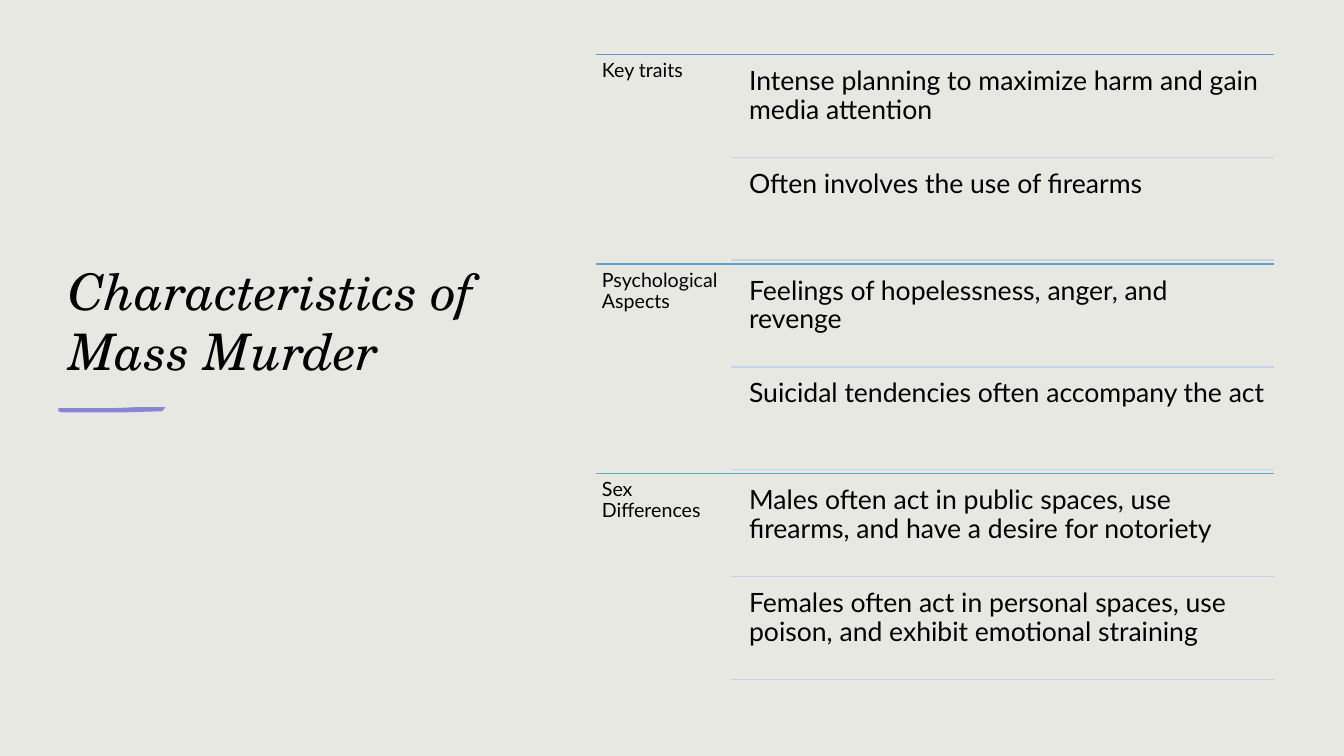
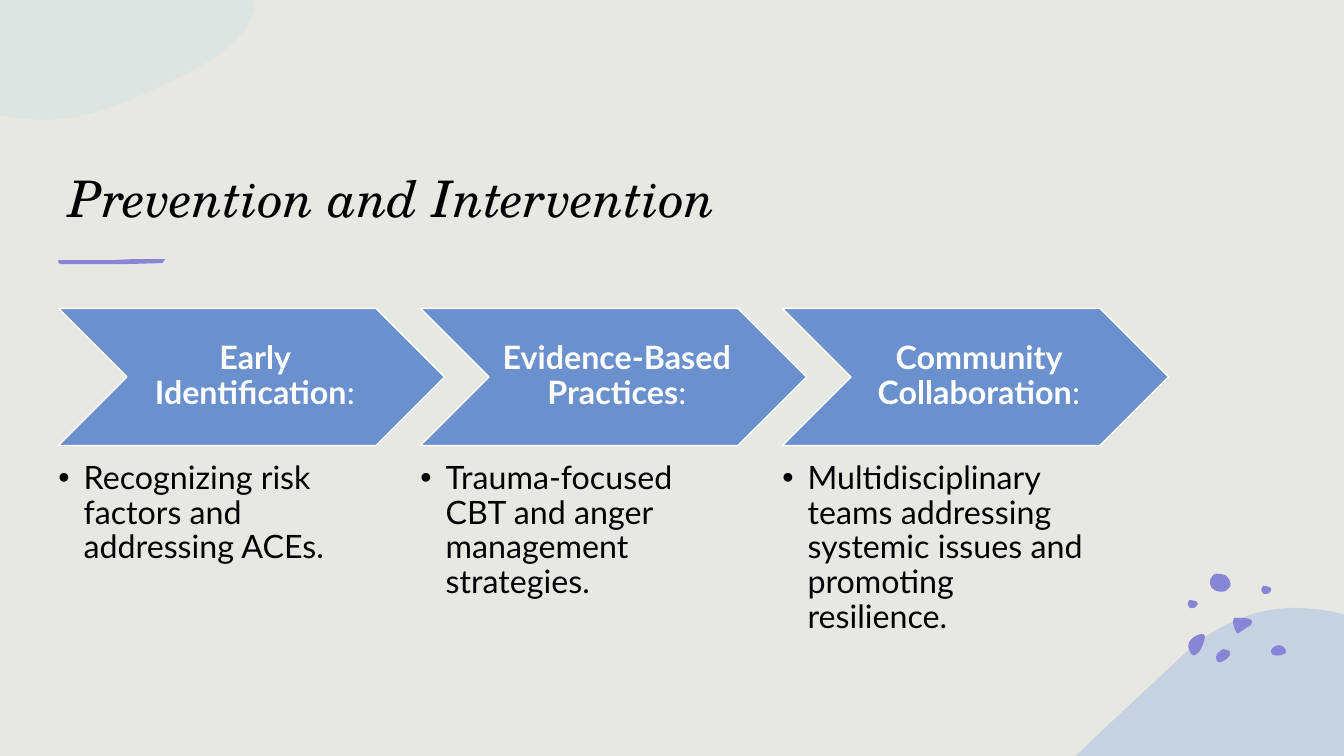
from lxml import etree
from pptx import Presentation
from pptx import util as u
from pptx.dml.color import RGBColor
from pptx.enum import shapes, text
from pptx.oxml.ns import qn

PX = 9144  # EMU in one px, 100 px to the inch
WIDTH, HEIGHT = 1333, 750

PAPER = RGBColor(0xE8, 0xE8, 0xE2)
BLACK = RGBColor(0x00, 0x00, 0x00)
WHITE = RGBColor(0xFF, 0xFF, 0xFF)
VIOLET = RGBColor(0x88, 0x85, 0xD7)
BLUE = RGBColor(0x6A, 0x90, 0xCE)
SKY = RGBColor(0x62, 0x9E, 0xC9)
TEAL = RGBColor(0x5A, 0xAE, 0xC3)
PALE_BLUE = RGBColor(0xC7, 0xD1, 0xE8)
HILL_BLUE = RGBColor(0xA6, 0xBC, 0xE2)
CLOUD_TEAL = RGBColor(0xBD, 0xDF, 0xE7)

# Outlines: a start point, then lines (x, y) and cubic curves (six numbers).
BRUSH = [(58, 1), (111, 1), (133, 0), (164, 0), (161, 4), (124, 5),
         (61, 5), (58, 4)]
CLOUD = [(0, 0), (253, 0), (253, 6), (245, 44, 200, 67, 158, 86),
         (123, 103, 86, 119, 41, 119), (31, 119, 22, 118, 13, 116), (0, 114)]
HILL = [(1288, 603), (1301, 604, 1314, 605, 1327, 608), (1333, 610),
        (1333, 750), (1067, 750), (1068, 749),
        (1102, 716, 1137, 684, 1169, 654), (1191, 632, 1214, 619, 1237, 611),
        (1254, 605, 1271, 603, 1288, 603)]
PEBBLES = [
    [(1213, 644), (1215, 644, 1216, 644, 1218, 645),
     (1220, 646, 1221, 648, 1220, 650), (1218, 653, 1212, 658, 1208, 657),
     (1207, 656, 1206, 654, 1206, 652), (1206, 650, 1208, 647, 1210, 646)],
    [(1191, 629), (1193, 629, 1195, 629, 1195, 631),
     (1195, 633), (1194, 638, 1192, 643, 1189, 647),
     (1187, 649, 1184, 652, 1182, 649), (1179, 646, 1178, 641, 1179, 638),
     (1180, 635, 1182, 634, 1184, 632), (1185, 632, 1188, 629, 1191, 629)],
    [(1269, 640), (1271, 640, 1274, 642, 1275, 644),
     (1276, 646, 1276, 648, 1273, 649), (1270, 651, 1262, 651, 1261, 648),
     (1260, 646, 1261, 644, 1262, 643), (1264, 641, 1266, 640, 1269, 640)],
    [(1201, 581), (1200, 581, 1199, 575, 1202, 572),
     (1204, 570, 1204, 569, 1207, 569), (1210, 569, 1214, 570, 1216, 571),
     (1218, 573, 1222, 578, 1220, 582), (1217, 585, 1216, 587, 1212, 587),
     (1209, 587, 1204, 586, 1203, 584), (1201, 583, 1201, 582, 1201, 581)],
    [(1228, 613), (1234, 613, 1245, 613, 1241, 619),
     (1241, 620, 1240, 621, 1239, 621), (1230, 627),
     (1229, 628, 1228, 629, 1227, 628), (1226, 627),
     (1224, 623, 1223, 620, 1223, 616), (1223, 615, 1223, 614, 1224, 613)],
]
SMALL_PEBBLE = [(0, 5), (0, 5, 0, 1, 2, 0), (4, 0, 5, 0, 7, 1),
                (8, 1, 10, 2, 10, 4), (10, 5, 9, 6, 8, 7),
                (8, 7, 8, 8, 6, 8), (5, 8, 3, 9, 2, 8)]
SMALL_PEBBLE_SPOTS = [(1251, 581), (1178, 595)]

TRAITS = [
    ("Key traits", BLUE,
     ["Intense planning to maximize harm and gain media attention",
      "Often involves the use of firearms"]),
    ("Psychological Aspects", SKY,
     ["Feelings of hopelessness, anger, and revenge",
      "Suicidal tendencies often accompany the act"]),
    ("Sex Differences", TEAL,
     ["Males often act in public spaces, use firearms, and have a desire "
      "for notoriety",
      "Females often act in personal spaces, use poison, and exhibit "
      "emotional straining"]),
]
STEPS = [
    ("Early Identification", "Recognizing risk factors and addressing ACEs."),
    ("Evidence-Based Practices",
     "Trauma-focused CBT and anger management strategies."),
    ("Community Collaboration",
     "Multidisciplinary teams addressing systemic issues and promoting "
     "resilience."),
]


def px(*lengths):
    return [u.Emu(n * PX) for n in lengths]


def bend(sp, segments):
    """Turn the straight segments that have six numbers into cubic curves."""
    for line, seg in zip(list(sp._element.iter(qn("a:lnTo"))), segments):
        if len(seg) == 2:
            continue
        line.tag = qn("a:cubicBezTo")
        for i in (0, 2):
            pt = etree.Element(qn("a:pt"))
            pt.set("x", str(seg[i] - sp.left))
            pt.set("y", str(seg[i + 1] - sp.top))
            line.insert(i // 2, pt)


class Deck:
    TITLE_FONT = "TeX Gyre Schola"
    BODY_FONT = "Lato"

    def __init__(self):
        self.prs = Presentation()
        self.prs.slide_width, self.prs.slide_height = px(WIDTH, HEIGHT)
        self.s = None

    def slide(self):
        self.s = self.prs.slides.add_slide(self.prs.slide_layouts[6])
        fill = self.s.background.fill
        fill.solid()
        fill.fore_color.rgb = PAPER

    def _frame(self, sp, insets, anchor):
        tf = sp.text_frame
        tf.word_wrap = True
        tf.vertical_anchor = anchor
        (tf.margin_left, tf.margin_top,
         tf.margin_right, tf.margin_bottom) = px(*insets)
        return tf.paragraphs[0]

    def _font(self, p, size, color, name=BODY_FONT, spacing=0.9):
        p.line_spacing = spacing
        p.font.name = name
        p.font.size = u.Pt(size)
        p.font.color.rgb = color

    def text(self, words, box, size, inset):
        sp = self.s.shapes.add_textbox(*px(*box))
        p = self._frame(sp, [inset] * 4, text.MSO_ANCHOR.TOP)
        p.text = words
        self._font(p, size, BLACK)
        return p

    def bullet(self, words, box, size):
        p_pr = self.text(words, box, size, 0)._p.get_or_add_pPr()
        p_pr.set("marL", str(25 * PX))
        p_pr.set("indent", str(-25 * PX))
        etree.SubElement(p_pr, qn("a:buFont")).set("typeface", "Arial")
        mark = etree.SubElement(p_pr, qn("a:buChar"))
        mark.set("char", "•")
        # The schema wants bullets ahead of the default run properties.
        for r_pr in p_pr.findall(qn("a:defRPr")):
            p_pr.append(r_pr)

    def title(self, words, box, brush_top):
        """Italic title resting on the bottom of its box, with a brush stroke."""
        sp = self.s.shapes.add_textbox(*px(*box))
        p = self._frame(sp, (10, 5, 10, 5), text.MSO_ANCHOR.BOTTOM)
        p.text = words
        self._font(p, 36, BLACK, self.TITLE_FONT, 1.0)
        p.font.italic = True
        self.outline(BRUSH, VIOLET, at=(0, brush_top))

    def rule(self, left, right, y, color):
        line = self.s.shapes.add_connector(
            shapes.MSO_CONNECTOR.STRAIGHT, *px(left, y, right, y))
        line.line.color.rgb = color
        line.line.width = u.Pt(1)
        etree.SubElement(line._element.spPr, qn("a:effectLst"))

    def outline(self, outline, color, at=(0, 0), opacity=100):
        segments = [[(n + at[i % 2]) * PX for i, n in enumerate(seg)]
                    for seg in outline]
        builder = self.s.shapes.build_freeform(*segments[0], scale=1.0)
        builder.add_line_segments([seg[-2:] for seg in segments[1:]])
        sp = builder.convert_to_shape()
        bend(sp, segments[1:])
        sp.shadow.inherit = False
        sp.line.fill.background()
        sp.fill.solid()
        sp.fill.fore_color.rgb = color
        if opacity < 100:
            clr = sp._element.spPr.find(qn("a:solidFill"))[0]
            etree.SubElement(clr, qn("a:alpha")).set("val", str(opacity * 1000))

    def chevron(self, words, box):
        sp = self.s.shapes.add_shape(shapes.MSO_SHAPE.CHEVRON, *px(*box))
        sp.shadow.inherit = False
        sp.fill.solid()
        sp.fill.fore_color.rgb = BLUE
        sp.line.color.rgb = WHITE
        sp.line.width = u.Pt(1)
        p = self._frame(sp, (10, 3, 3, 3), text.MSO_ANCHOR.MIDDLE)
        p.alignment = text.PP_ALIGN.CENTER
        self._font(p, 23, WHITE)
        for part, bold in ((words, True), (":", False)):
            r = p.add_run()
            r.text = part
            r.font.bold = bold


def characteristics(deck):
    deck.slide()
    deck.title("Characteristics of Mass Murder", (58, 70, 467, 313), 404)
    left, right = 591, 1264
    for i, (label, color, items) in enumerate(TRAITS):
        top = 54 + 208 * i
        deck.rule(left, right, top, color)
        deck.text(label, (left, top, 135, 208), 14, 6)
        for j, item in enumerate(items):
            y = top + 5 + 102 * j
            deck.text(item, (735, y, 528, 97), 19, 8)
            deck.rule(725, right, y + 97, PALE_BLUE)


def prevention(deck):
    deck.slide()
    deck.outline(CLOUD, CLOUD_TEAL, opacity=25)
    deck.title("Prevention and Intervention", (58, 86, 1102, 145), 257)
    deck.outline(HILL, HILL_BLUE, opacity=50)
    for pebble in PEBBLES:
        deck.outline(pebble, VIOLET)
    for spot in SMALL_PEBBLE_SPOTS:
        deck.outline(SMALL_PEBBLE, VIOLET, at=spot)
    for i, (step, detail) in enumerate(STEPS):
        x = 58 + 359 * i
        deck.chevron(step, (x, 306, 383, 136))
        deck.bullet(detail, (x, 458, 306, 176), 23)


def main():
    deck = Deck()
    characteristics(deck)
    prevention(deck)
    deck.prs.save("out.pptx")


if __name__ == "__main__":
    main()
